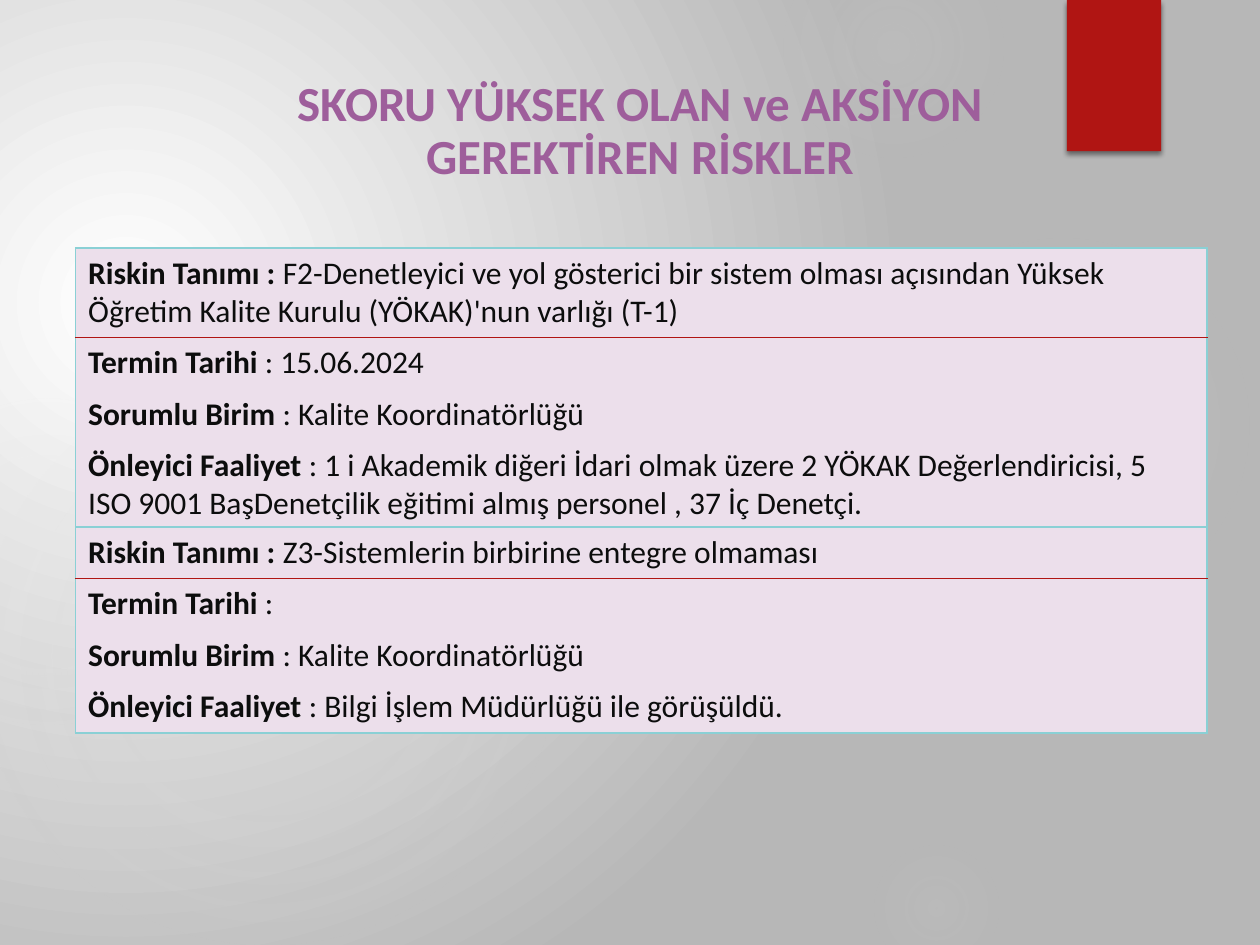
from dataclasses import dataclass
from lxml import etree
from pptx import Presentation
from pptx import util as u
from pptx.dml.color import RGBColor
from pptx.enum import shapes, text
from pptx.oxml import ns

HUES = {"red": "B01513", "title": "9E5E9B", "ink": "0C0D0D", "cell": "ECDFEB",
        "edge": "8AD0D5", "glow": "D9D9D9", "white": "FFFFFF", "gray": "B7B7B7"}
FONT = "Calibri"
COLS, ROWS = 120, 90
WIDE, HIGH = u.Inches(10), u.Inches(7.5)
SPACE = 'xmlns:a="http://schemas.openxmlformats.org/drawingml/2006/main"'


@dataclass
class Stop:
    pos: int
    hue: str
    alpha: int = 100


@dataclass
class Blob:
    left: float
    top: float
    size: float
    alphas: tuple[int, int]
    fade: int


@dataclass
class Risk:
    top: float
    lines: list[tuple[str, str]]


BLOBS = [
    Blob(82.7, 22, 37, (7, 6), 69),
    Blob(74.6, -6, 21, (14, 7), 73),
    Blob(82.7, 80, 13, (9, 5), 66),
    Blob(-2, 35, 55, (11, 10), 75),
    Blob(-11, 38, 31, (8, 8), 72),
]
UNIT = ("Sorumlu Birim ", ": Kalite Koordinatörlüğü")
RISKS = [
    Risk(23.6, [
        ("Riskin Tanımı : ", "F2-Denetleyici ve yol gösterici bir sistem olması açısından "
         "Yüksek Öğretim Kalite Kurulu (YÖKAK)'nun varlığı (T-1)"),
        ("Termin Tarihi ", ": 15.06.2024"),
        UNIT,
        ("Önleyici Faaliyet ", ": 1 i Akademik diğeri İdari olmak üzere 2 YÖKAK "
         "Değerlendiricisi, 5 ISO 9001 BaşDenetçilik eğitimi almış personel , 37 İç Denetçi."),
    ]),
    Risk(50.2, [
        ("Riskin Tanımı : ", "Z3-Sistemlerin birbirine entegre olmaması"),
        ("Termin Tarihi ", ":"),
        UNIT,
        ("Önleyici Faaliyet ", ": Bilgi İşlem Müdürlüğü ile görüşüldü."),
    ]),
]


def across(n: float) -> int:
    return round(WIDE * n / COLS)


def down(n: float) -> int:
    return round(HIGH * n / ROWS)


def box(left: float, top: float, wide: float, high: float) -> tuple[int, int, int, int]:
    return across(left), down(top), across(wide), down(high)


def color(name: str) -> RGBColor:
    return RGBColor.from_string(HUES[name])


def shade(host, stops: list[Stop], rect: tuple[int, int, int, int]) -> None:
    marks = "".join(
        f'<a:gs pos="{s.pos * 1000}"><a:srgbClr val="{HUES[s.hue]}">'
        f'<a:alpha val="{s.alpha * 1000}"/></a:srgbClr></a:gs>' for s in stops)
    left, top, right, low = (n * 1000 for n in rect)
    grad = etree.fromstring(
        f'<a:gradFill {SPACE} rotWithShape="1"><a:gsLst>{marks}</a:gsLst><a:path path="circle">'
        f'<a:fillToRect l="{left}" t="{top}" r="{right}" b="{low}"/></a:path></a:gradFill>')
    host.replace(host.find(ns.qn("a:solidFill")), grad)


def add_shape(slide, kind, place: tuple[int, int, int, int], hue: str):
    shape = slide.shapes.add_shape(kind, *place)
    shape.shadow.inherit = False
    shape.fill.solid()
    shape.fill.fore_color.rgb = color(hue)
    shape.line.fill.background()
    return shape


def add_blob(slide, blob: Blob) -> None:
    place = box(blob.left, blob.top, blob.size, blob.size)
    shape = add_shape(slide, shapes.MSO_SHAPE.OVAL, place, "glow")
    core, ring = blob.alphas
    stops = [Stop(0, "glow", core), Stop(36, "glow", ring), Stop(blob.fade, "glow", 0)]
    shade(shape._element.spPr, stops, (50, 50, 50, 50))


def add_flag(slide) -> None:
    flag = add_shape(slide, shapes.MSO_SHAPE.RECTANGLE, box(101.6, 0, 9, 14.4), "red")
    glow = flag._element.spPr.find(ns.qn("a:effectLst"))
    glow.append(etree.fromstring(
        f'<a:outerShdw {SPACE} blurRad="{u.Pt(3)}" dist="{u.Pt(2)}" dir="5400000" '
        'rotWithShape="0"><a:srgbClr val="000000"><a:alpha val="45000"/></a:srgbClr></a:outerShdw>'))


def style(run, size: int, hue: str, bold: bool) -> None:
    run.font.name = FONT
    run.font.size = u.Pt(size)
    run.font.bold = bold
    run.font.color.rgb = color(hue)


def set_title(slide) -> None:
    title = slide.shapes.title
    title.left, title.top, title.width, title.height = box(26.4, 7, 69.1, 11.2)
    frame = title.text_frame
    frame.text = "SKORU YÜKSEK OLAN ve AKSİYON GEREKTİREN RİSKLER"
    frame.word_wrap = True
    frame.auto_size = text.MSO_AUTO_SIZE.NONE
    frame.vertical_anchor = text.MSO_ANCHOR.BOTTOM
    line = frame.paragraphs[0]
    line.alignment = text.PP_ALIGN.CENTER
    line.line_spacing = 0.9
    line.space_after = u.Pt(6)
    style(line.runs[0], 28, "title", True)
    slide.shapes._spTree.append(title._element)


def edge(cell, sides: dict[str, str]) -> None:
    props = cell._tc.get_or_add_tcPr()
    for spot, side in enumerate("LRTB"):
        hue = sides.get(side)
        fill = f'<a:solidFill><a:srgbClr val="{HUES[hue]}"/></a:solidFill>' if hue else "<a:noFill/>"
        props.insert(spot, etree.fromstring(f'<a:ln{side} {SPACE} w="{u.Pt(1)}">{fill}</a:ln{side}>'))


def add_risk(slide, risk: Risk) -> None:
    count = len(risk.lines)
    spans = (104.9, 2.76)
    place = box(7.2, risk.top, sum(spans), 4.9 * count)
    table = slide.shapes.add_table(count, len(spans), *place).table
    table.first_row = table.horz_banding = False
    for col, span in zip(table.columns, spans):
        col.width = across(span)
    for row, (label, value) in enumerate(risk.lines):
        tops = {0: "edge", 1: "red"}
        lows = {0: "red", count - 1: "edge"}
        for col, side in enumerate("LR"):
            cell = table.cell(row, col)
            cell.fill.solid()
            cell.fill.fore_color.rgb = color("cell")
            edge(cell, {side: "edge", "T": tops.get(row), "B": lows.get(row)})
        line = table.cell(row, 0).text_frame.paragraphs[0]
        for words, bold in ((label, True), (value, False)):
            run = line.add_run()
            run.text = words
            style(run, 18, "ink", bold)


def main() -> None:
    deck = Presentation()
    deck.slide_width, deck.slide_height = WIDE, HIGH
    slide = deck.slides.add_slide(deck.slide_layouts[5])
    slide.background.fill.solid()
    back = slide._element.find(".//" + ns.qn("p:bgPr"))
    shade(back, [Stop(0, "white"), Stop(100, "gray")], (45, 65, 125, 100))
    for blob in BLOBS:
        add_blob(slide, blob)
    add_flag(slide)
    set_title(slide)
    for risk in RISKS:
        add_risk(slide, risk)
    deck.save("out.pptx")


if __name__ == "__main__":
    main()
